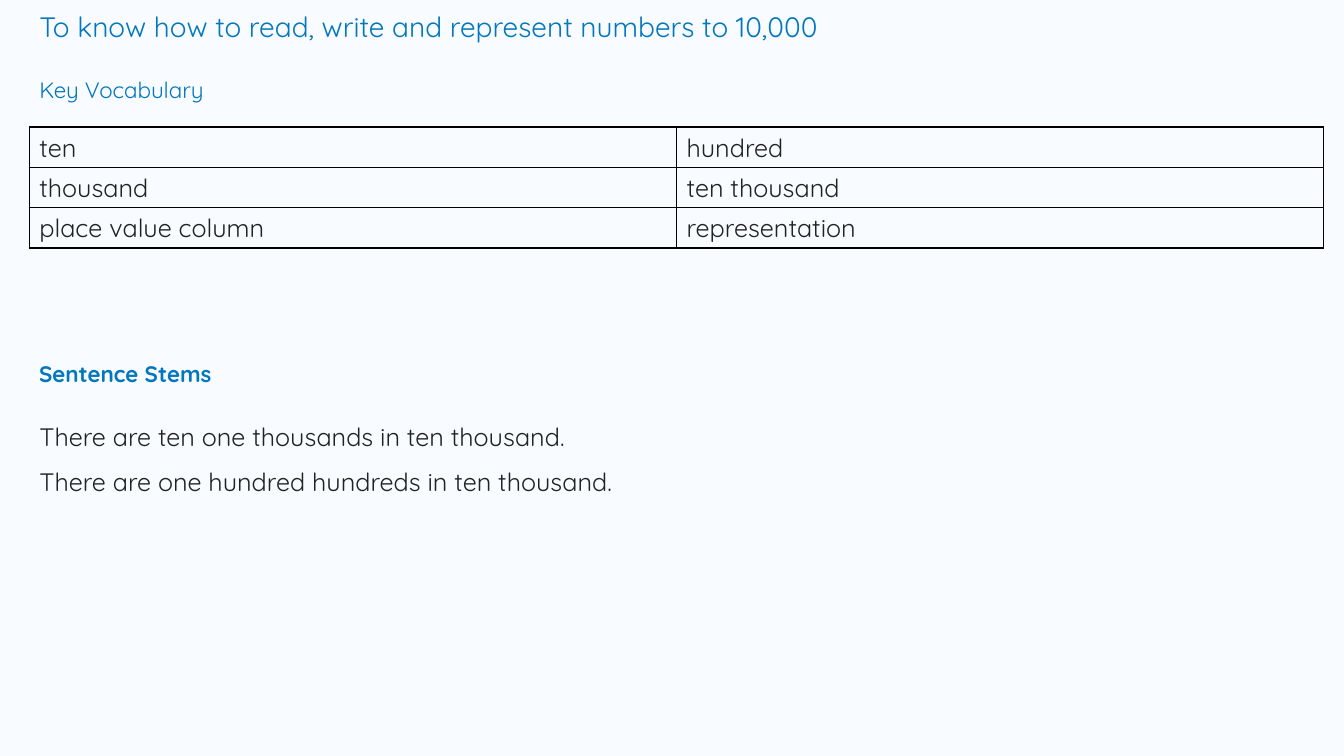
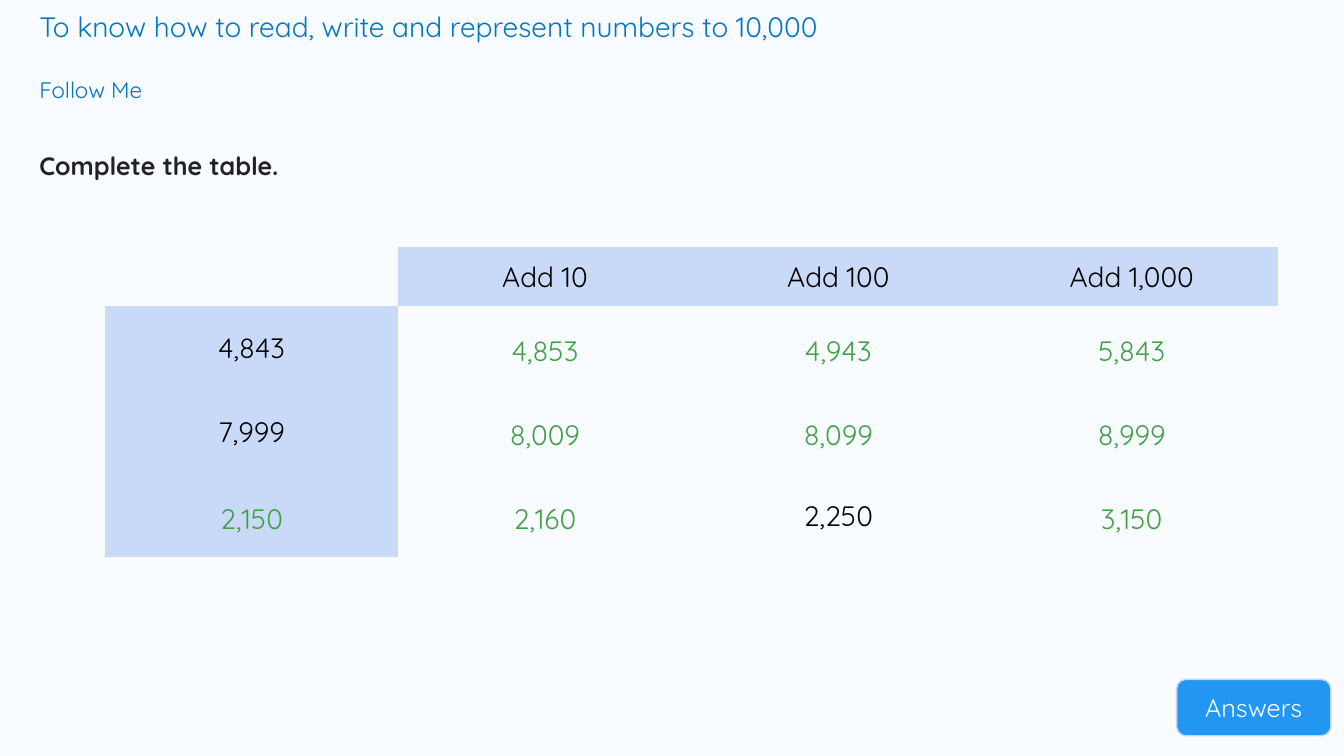
"""Build two maths slides on numbers to 10,000."""
from pptx import Presentation
from pptx.dml.color import RGBColor
from pptx.enum import shapes, text
from pptx.oxml import parse_xml
from pptx.oxml.ns import nsdecls, qn
from pptx.util import Inches, Pt

hue = RGBColor.from_string
BLUE, DARK, BLACK, GREEN, PALE = "0277BD", "222222", "000000", "43A047", "C9DAF8"
LEFT, WIDE = 0.29, 12.84
PLAIN = "{2D5ABB26-0587-4C30-8999-92F81FD0307C}"


def write(frame, words, size, color, bold=False, align=text.PP_ALIGN.LEFT, space=1.0):
    frame.text = words
    for para in frame.paragraphs:
        para.alignment = align
        para.line_spacing = space
        para.space_before = Pt(0)
        for run in para.runs:
            font = run.font
            font.name, font.size, font.bold = "Quicksand", Pt(size), bold
            font.color.rgb = hue(color)


def grid(slide, rows, box, heights):
    frame = slide.shapes.add_table(len(rows), len(rows[0]), *map(Inches, box))
    table = frame.table
    table.first_row = table.horz_banding = False
    table._tbl.tblPr.find(qn("a:tableStyleId")).text = PLAIN
    for row, high in zip(table.rows, heights):
        row.height = Inches(high)
    return table


deck = Presentation()
deck.slide_width, deck.slide_height = Inches(13.33), Inches(7.5)
master = deck.slide_master
master.background.fill.solid()
master.background.fill.fore_color.rgb = hue("F8FBFF")
level = master.element.find(f".//{qn('p:bodyStyle')}/{qn('a:lvl1pPr')}")
level.set("marL", "0")
level.set("indent", "0")
level.replace(level.find(qn("a:buChar")), parse_xml(f"<a:buNone {nsdecls('a')}/>"))

layout = deck.slide_layouts[3]
spots = {0: (LEFT, 0.04, 12.34, 0.44), 1: (LEFT, 0.71, 2.97, 0.46)}
for hold in layout.placeholders:
    if hold.placeholder_format.idx in spots:
        box = spots[hold.placeholder_format.idx]
        hold.left, hold.top, hold.width, hold.height = map(Inches, box)

pages = [
    ("Key Vocabulary",
     "There are ten one thousands in ten thousand.\n"
     "There are one hundred hundreds in ten thousand.", 3.98, 0.95, False),
    ("Follow Me", "Complete the table.", 1.29, 0.56, True),
]
for head, words, top, high, bold in pages:
    slide = deck.slides.add_slide(layout)
    title, label, body = slide.placeholders
    body.left, body.top, body.width, body.height = map(Inches, (LEFT, top, WIDE, high))
    for hold in (title, label, body):
        hold.text_frame.auto_size = text.MSO_AUTO_SIZE.NONE
        hold.text_frame.vertical_anchor = text.MSO_ANCHOR.TOP
    write(title.text_frame, "To know how to read, write and represent numbers to 10,000", 20, BLUE)
    write(label.text_frame, head, 16, BLUE)
    write(body.text_frame, words, 18, DARK, bold, space=1.5)

vocab, follow = deck.slides

stems = vocab.shapes.add_textbox(*map(Inches, (LEFT, 3.52, 2.97, 0.46)))
stems.text_frame.word_wrap = True
write(stems.text_frame, "Sentence Stems", 16, BLUE, True)

terms = [
    ("ten", "hundred"),
    ("thousand", "ten thousand"),
    ("place value column", "representation"),
]
table = grid(vocab, terms, (LEFT, 1.26, WIDE, 1.2), [0.4] * 3)
for cell, term in zip(table.iter_cells(), sum(terms, ())):
    write(cell.text_frame, term, 18, DARK)
    props = cell._tc.get_or_add_tcPr()
    for side in "LRTB":
        props.append(parse_xml(
            f'<a:ln{side} {nsdecls("a")} w="12700"><a:solidFill>'
            f'<a:srgbClr val="{BLACK}"/></a:solidFill></a:ln{side}>'))
    cell.fill.background()

button = follow.shapes.add_shape(
    shapes.MSO_SHAPE.ROUNDED_RECTANGLE, *map(Inches, (11.67, 6.74, 1.53, 0.56)))
button.shadow.inherit = False
button.fill.solid()
button.fill.fore_color.rgb = hue("2196F3")
button.line.color.rgb = hue("CCD4F4")
button.line.width = Pt(1)
button.text_frame.vertical_anchor = text.MSO_ANCHOR.MIDDLE
write(button.text_frame, "Answers", 18, "FFFFFF", align=text.PP_ALIGN.CENTER)

given = [
    ("", "Add 10", "Add 100", "Add 1,000"),
    ("4,843", "", "", ""),
    ("7,999", "", "", ""),
    ("", "", "2,250", ""),
]
solved = [
    ("", "", "", ""),
    ("", "4,853", "4,943", "5,843"),
    ("", "8,009", "8,099", "8,999"),
    ("2,150", "2,160", "", "3,150"),
]
for rows, top, color, shade in ((given, 2.45, BLACK, True), (solved, 2.48, GREEN, False)):
    table = grid(follow, rows, (1.04, top, 11.64, 3.08), [0.59] + [0.83] * 3)
    for r, row in enumerate(rows):
        for c, words in enumerate(row):
            cell = table.cell(r, c)
            cell.vertical_anchor = text.MSO_ANCHOR.MIDDLE
            cell.margin_top = cell.margin_bottom = Inches(0.1)
            write(cell.text_frame, words, 20, color, align=text.PP_ALIGN.CENTER)
            if shade and (r == 0) != (c == 0):
                cell.fill.solid()
                cell.fill.fore_color.rgb = hue(PALE)
            else:
                cell.fill.background()

deck.save("out.pptx")
